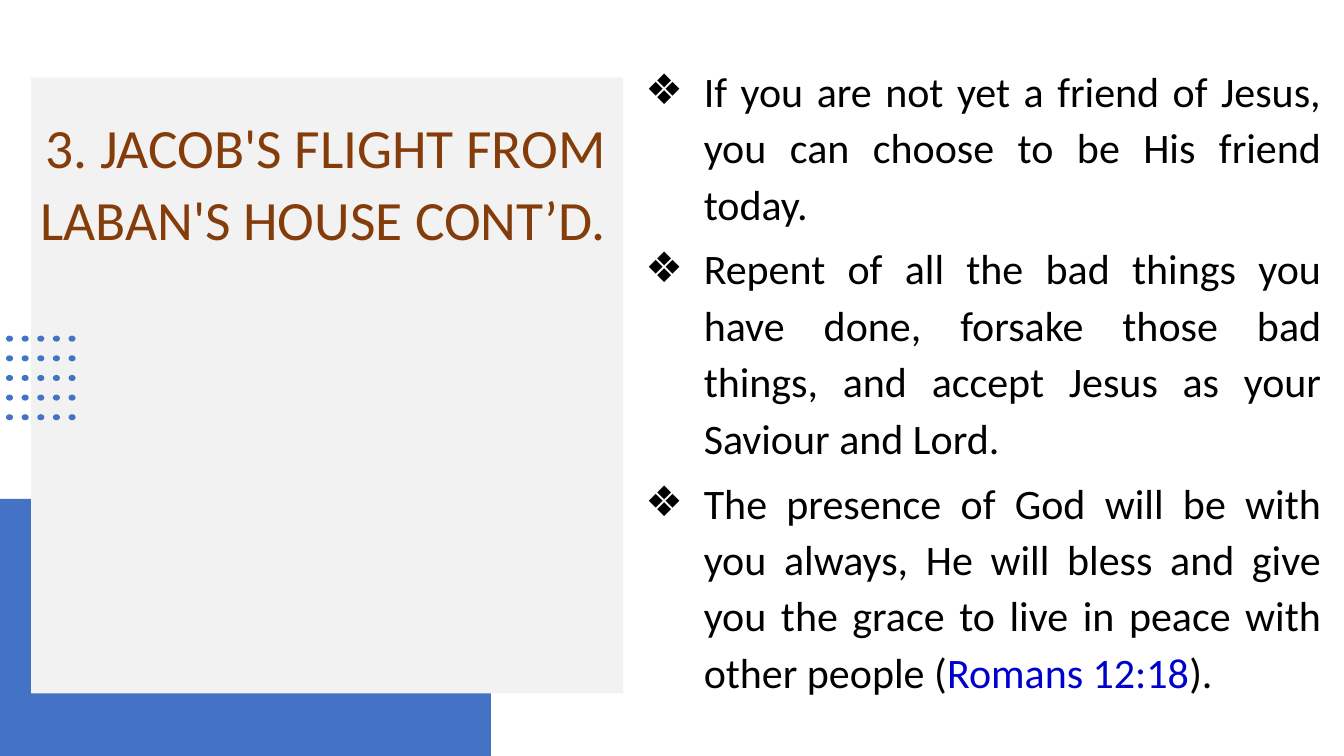
from dataclasses import dataclass
from itertools import product

from lxml import etree
from pptx import Presentation
from pptx import util as u
from pptx.dml.color import RGBColor
from pptx.enum import shapes, text
from pptx.oxml import ns


@dataclass(frozen=True)
class Theme:
    font: str = "Calibri"
    accent: str = "4472C4"
    panel: str = "F2F2F2"
    title: str = "843C0B"
    body: str = "000000"
    reference: str = "0000CC"
    title_size: float = 39.6
    body_size: float = 30


@dataclass(frozen=True)
class Box:
    left: float
    top: float
    width: float
    height: float

    def lengths(self) -> tuple:
        return tuple(u.Inches(n) for n in (self.left, self.top, self.width, self.height))


@dataclass(frozen=True)
class Panel:
    box: Box
    color: str


@dataclass(frozen=True)
class Span:
    words: str
    color: str


THEME = Theme()
PANELS = [
    Panel(Box(0, 4.95, 4.87, 2.55), THEME.accent),
    Panel(Box(0.31, 0.77, 5.87, 6.11), THEME.panel),
]
TITLE_BOX = Box(0.06, 0.85, 6.05, 1.87)
BODY_BOX = Box(6.3, 0.46, 6.91, 6.58)
TITLE = "3. JACOB'S FLIGHT FROM LABAN'S HOUSE CONT’D."
POINTS = [
    [Span("If you are not yet a friend of Jesus, you can choose to be His friend today.", THEME.body)],
    [Span("Repent of all the bad things you have done, forsake those bad things, "
          "and accept Jesus as your Saviour and Lord.", THEME.body)],
    [Span("The presence of God will be with you always, He will bless and give you "
          "the grace to live in peace with other people (", THEME.body),
     Span("Romans 12:18", THEME.reference),
     Span(").", THEME.body)],
]
DOTS_PER_SIDE = 5
FIRST_DOT = Box(0.06, 3.33, 0.07, 0.06)
DOT_STEP_X, DOT_STEP_Y = 0.155, 0.195
BULLET_INDENT = 0.58


def add_filled(owner, kind, box: Box, color: str):
    shape = owner.add_shape(kind, *box.lengths())
    shape.shadow.inherit = False
    shape.fill.solid()
    shape.fill.fore_color.rgb = RGBColor.from_string(color)
    shape.line.fill.background()
    return shape


def add_dots(slide) -> None:
    group = slide.shapes.add_group_shape()
    for column, row in product(range(DOTS_PER_SIDE), repeat=2):
        box = Box(FIRST_DOT.left + column * DOT_STEP_X, FIRST_DOT.top + row * DOT_STEP_Y,
                  FIRST_DOT.width, FIRST_DOT.height)
        add_filled(group.shapes, shapes.MSO_SHAPE.OVAL, box, THEME.accent)


def place_frame(placeholder, box: Box):
    placeholder.left, placeholder.top, placeholder.width, placeholder.height = box.lengths()
    frame = placeholder.text_frame
    frame.word_wrap = True
    frame.auto_size = text.MSO_AUTO_SIZE.NONE
    frame.vertical_anchor = text.MSO_ANCHOR.MIDDLE
    return frame


def format_paragraph(paragraph, alignment, line_spacing: float) -> None:
    paragraph.alignment = alignment
    paragraph.line_spacing = line_spacing
    paragraph.space_before = u.Pt(0)
    paragraph.space_after = u.Pt(6)


def format_run(run, size: float, color: str) -> None:
    run.font.name = THEME.font
    run.font.size = u.Pt(size)
    run.font.color.rgb = RGBColor.from_string(color)


def add_bullet(paragraph, mark: str) -> None:
    properties = paragraph._p.get_or_add_pPr()
    properties.set("marL", str(u.Inches(BULLET_INDENT)))
    properties.set("indent", str(-u.Inches(BULLET_INDENT)))
    etree.SubElement(properties, ns.qn("a:buChar")).set("char", mark)


def fill_title(placeholder) -> None:
    frame = place_frame(placeholder, TITLE_BOX)
    frame.text = TITLE
    paragraph = frame.paragraphs[0]
    format_paragraph(paragraph, text.PP_ALIGN.RIGHT, 1.08)
    format_run(paragraph.runs[0], THEME.title_size, THEME.title)


def fill_body(placeholder) -> None:
    frame = place_frame(placeholder, BODY_BOX)
    for index, spans in enumerate(POINTS):
        paragraph = frame.add_paragraph() if index else frame.paragraphs[0]
        format_paragraph(paragraph, text.PP_ALIGN.JUSTIFY, 1.12)
        add_bullet(paragraph, "❖")
        for span in spans:
            run = paragraph.add_run()
            run.text = span.words
            format_run(run, THEME.body_size, span.color)


def main() -> None:
    presentation = Presentation()
    presentation.slide_width, presentation.slide_height = u.Inches(13.33), u.Inches(7.5)
    slide = presentation.slides.add_slide(presentation.slide_layouts[1])
    title, body = slide.placeholders
    for panel in PANELS:
        shape = add_filled(slide.shapes, shapes.MSO_SHAPE.RECTANGLE, panel.box, panel.color)
        title.element.addprevious(shape.element)
    add_dots(slide)
    fill_title(title)
    fill_body(body)
    presentation.save("out.pptx")


if __name__ == "__main__":
    main()
